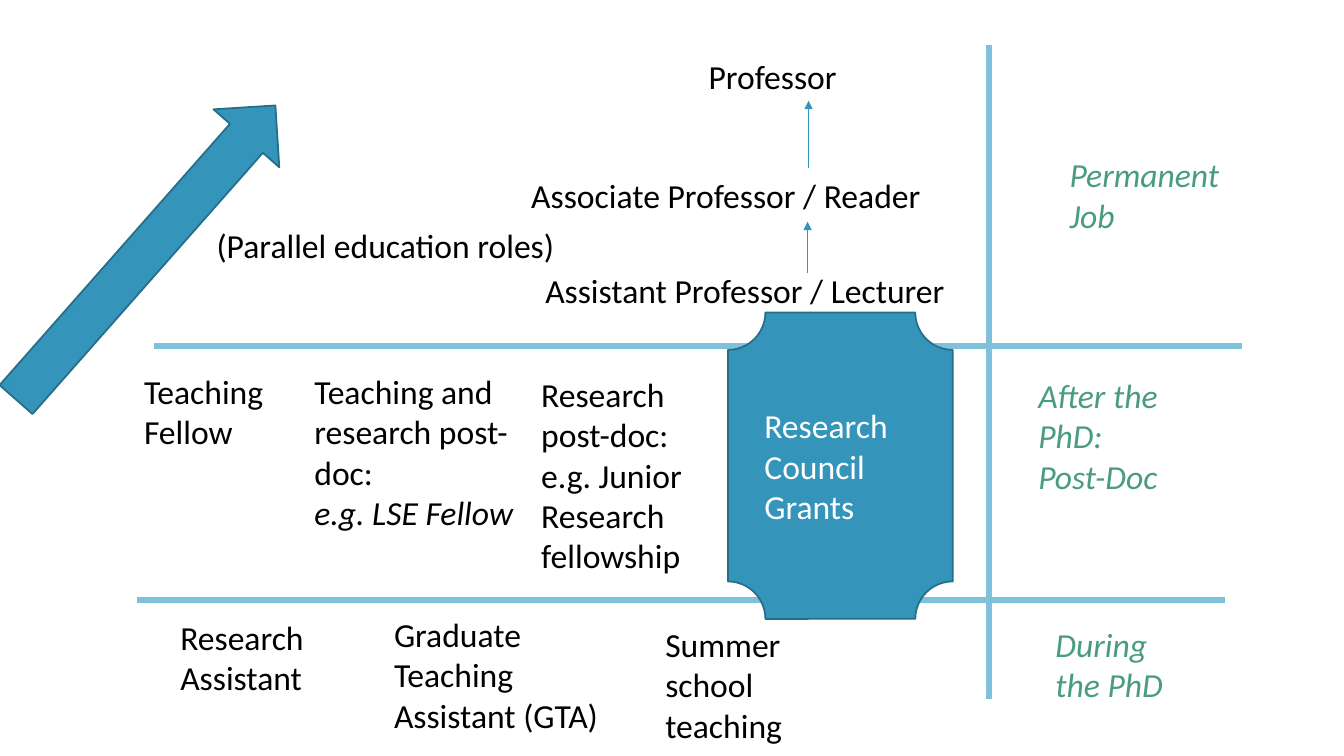
from pptx import Presentation
from pptx.dml.color import RGBColor
from pptx.enum.shapes import MSO_CONNECTOR, MSO_SHAPE
from pptx.enum.text import MSO_ANCHOR, MSO_AUTO_SIZE, PP_ALIGN
from pptx.oxml.ns import qn
from pptx.util import Inches, Pt
from lxml.etree import SubElement

BLACK = RGBColor(0x00, 0x00, 0x00)
WHITE = RGBColor(0xFF, 0xFF, 0xFF)
GREEN = RGBColor(0x4A, 0x9B, 0x83)
BLUE = RGBColor(0x34, 0x94, 0xBA)
NAVY = RGBColor(0x26, 0x6D, 0x8A)
PALE = RGBColor(0x7F, 0xC1, 0xDB)


def write(frame, lines, color):
    frame.word_wrap = True
    for i, (text, slant) in enumerate(lines):
        para = frame.paragraphs[0] if i == 0 else frame.add_paragraph()
        para.alignment = PP_ALIGN.LEFT
        run = para.add_run()
        run.text = text
        run.font.name = "Calibri"
        run.font.size = Pt(24)
        run.font.italic = slant
        run.font.color.rgb = color


def add_label(slide, box, lines, color=BLACK):
    label = slide.shapes.add_textbox(*map(Inches, box))
    write(label.text_frame, lines, color)
    label.text_frame.auto_size = MSO_AUTO_SIZE.SHAPE_TO_FIT_TEXT


def add_line(slide, start, end, color, width, arrow=False):
    line = slide.shapes.add_connector(
        MSO_CONNECTOR.STRAIGHT, *map(Inches, (*start, *end)))
    line.line.color.rgb = color
    line.line.width = Pt(width)
    props = line._element.spPr
    if arrow:
        SubElement(props.find(qn("a:ln")), qn("a:tailEnd"), type="triangle")
    SubElement(props, qn("a:effectLst"))


def add_solid(slide, kind, box):
    shape = slide.shapes.add_shape(kind, *map(Inches, box))
    shape.shadow.inherit = False
    shape.fill.solid()
    shape.fill.fore_color.rgb = BLUE
    shape.line.color.rgb = NAVY
    shape.line.width = Pt(1.25)
    return shape


def draw_row(slide, left, top, items):
    for x, y, width, height, lines in items:
        add_label(slide, (left + x, top + y, width, height), lines)


def draw_stages(slide, left, top):
    stages = [
        (0.31, 0, 1.9, 0.91, ["Permanent Job"]),
        (0, 2.19, 1.8, 1.77, ["After the PhD:", "Post-Doc"]),
        (0.17, 4.66, 1.47, 1.31, ["During the PhD"]),
    ]
    for x, y, width, height, texts in stages:
        add_label(slide, (left + x, top + y, width, height),
                  [(text, True) for text in texts], GREEN)


def draw_frame(slide, left, top, width, height):
    for x, y in ((0.17, 2.98), (0, 5.5)):
        start = (left + x, top + y)
        add_line(slide, start, (start[0] + width, start[1]), PALE, 4.5)
    mid = left + 8.45
    add_line(slide, (mid, top), (mid, top + height), PALE, 4.5)


def draw_ladder(slide, left, top):
    draw_row(slide, left, top, [
        (1.76, 0, 4.73, 0.5, [("Professor", False)]),
        (0, 1.18, 4.91, 0.5, [("Associate Professor / Reader", False)]),
        (0.14, 2.12, 5.3, 0.5, [("Assistant Professor / Lecturer", False)]),
        (-3.12, 1.67, 5.3, 0.5, [("(Parallel education roles)", False)]),
    ])
    for x, low, high in ((2.84, 2.2, 1.69), (2.85, 1.16, 0.49)):
        add_line(slide, (left + x, top + low), (left + x, top + high),
                 BLUE, 0.75, arrow=True)


def draw_grants(slide, box):
    plaque = add_solid(slide, MSO_SHAPE.PLAQUE, box)
    plaque.text_frame.vertical_anchor = MSO_ANCHOR.MIDDLE
    write(plaque.text_frame, [("Research Council Grants", False)], WHITE)


def draw_climb(slide, box):
    arrow = add_solid(slide, MSO_SHAPE.DOWN_ARROW, box)
    arrow.rotation = 221.4


def main():
    deck = Presentation()
    deck.slide_width = Inches(13.33)
    deck.slide_height = Inches(7.5)
    slide = deck.slides.add_slide(deck.slide_layouts[6])
    draw_row(slide, 1.33, 3.63, [
        (0, 0, 2.01, 0.91, [("Teaching Fellow", False)]),
        (3.94, 0.03, 1.83, 2.12,
         [("Research post-doc: e.g. Junior Research fellowship", False)]),
        (1.69, 0, 2.5, 1.72, [("Teaching and research post-doc:", False),
                              ("e.g. LSE Fellow", True)]),
    ])
    draw_row(slide, 1.69, 6.04, [
        (0, 0.03, 2.3, 0.91, [("Research Assistant", False)]),
        (2.12, 0, 2.3, 1.31, [("Graduate Teaching Assistant (GTA)", False)]),
        (4.81, 0.1, 2.25, 0.91, [("Summer school teaching", False)]),
    ])
    draw_stages(slide, 10.2, 1.48)
    draw_frame(slide, 1.36, 0.45, 10.79, 6.48)
    draw_ladder(slide, 5.17, 0.51)
    draw_grants(slide, (7.22, 3.1, 2.23, 3.04))
    draw_climb(slide, (1.01, 0.56, 0.87, 3.89))
    deck.save("out.pptx")


if __name__ == "__main__":
    main()
